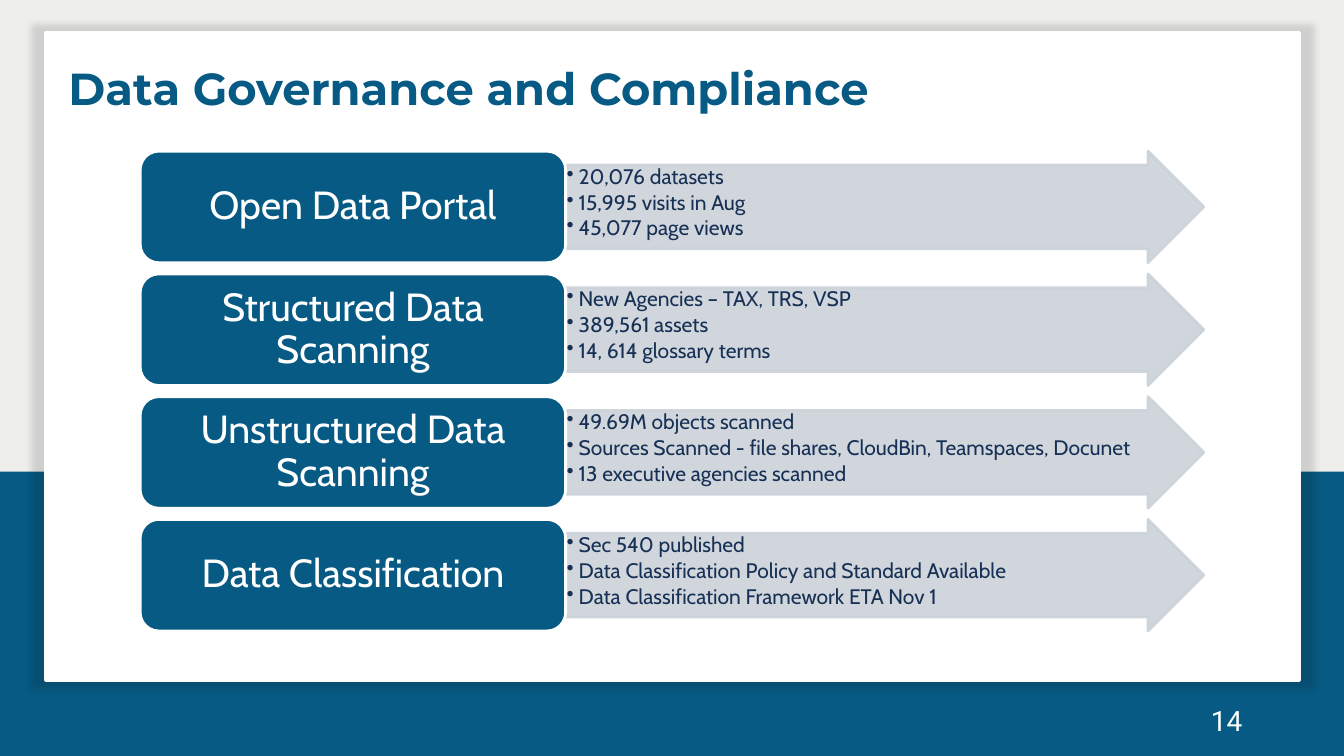
from lxml import etree
from pptx import Presentation
from pptx.dml.color import RGBColor
from pptx.enum.shapes import MSO_SHAPE
from pptx.enum.text import MSO_ANCHOR, PP_ALIGN
from pptx.oxml import parse_xml
from pptx.oxml.ns import qn
from pptx.util import Inches, Pt

RECTANGLE = MSO_SHAPE.RECTANGLE
ROUNDED = MSO_SHAPE.ROUNDED_RECTANGLE
ARROW = MSO_SHAPE.RIGHT_ARROW
TOP, MIDDLE = MSO_ANCHOR.TOP, MSO_ANCHOR.MIDDLE
LEFT, CENTER, RIGHT = PP_ALIGN.LEFT, PP_ALIGN.CENTER, PP_ALIGN.RIGHT

BLUE = RGBColor(0x07, 0x5A, 0x83)
NAVY = RGBColor(0x17, 0x30, 0x55)
GREY = RGBColor(0xCC, 0xD2, 0xD9)
PALE = RGBColor(0xEE, 0xEE, 0xED)
WHITE = RGBColor(0xFF, 0xFF, 0xFF)

PANEL_SHADOW = (
    '<a:effectLst xmlns:a="http://schemas.openxmlformats.org/drawingml/2006/main">'
    '<a:outerShdw blurRad="63500" sx="102000" sy="102000" algn="ctr" rotWithShape="0">'
    '<a:srgbClr val="000000"><a:alpha val="13000"/></a:srgbClr>'
    '</a:outerShdw></a:effectLst>'
)

TOPICS = [
    ("Open Data Portal",
     ["20,076 datasets", "15,995 visits in Aug", "45,077 page views"]),
    ("Structured Data Scanning",
     ["New Agencies – TAX, TRS, VSP", "389,561 assets", "14, 614 glossary terms"]),
    ("Unstructured Data Scanning",
     ["49.69M objects scanned",
      "Sources Scanned - file shares, CloudBin, Teamspaces, Docunet",
      "13 executive agencies scanned"]),
    ("Data Classification",
     ["Sec 540 published",
      "Data Classification Policy and Standard Available",
      "Data Classification Framework ETA Nov 1"]),
]


def add_block(slide, preset, box, fill, line=None):
    """Add a flat preset shape, with a 2 pt outline if a line colour is given."""
    block = slide.shapes.add_shape(preset, *map(Inches, box))
    block.shadow.inherit = False
    block.fill.solid()
    block.fill.fore_color.rgb = fill
    if line is None:
        block.line.fill.background()
    else:
        block.line.color.rgb = line
        block.line.width = Pt(2)
    return block


def write(frame, lines, font, size, color, align, anchor, bold=False):
    """Fill a text frame with one paragraph per line in a single style."""
    frame.word_wrap = True
    frame.vertical_anchor = anchor
    frame.text = "\n".join(lines)
    for paragraph in frame.paragraphs:
        paragraph.alignment = align
        for run in paragraph.runs:
            run.font.name = font
            run.font.size = Pt(size)
            run.font.bold = bold
            run.font.color.rgb = color


def set_insets(frame, horizontal, vertical):
    """Set matching side insets and matching top and bottom insets."""
    frame.margin_left = frame.margin_right = Inches(horizontal)
    frame.margin_top = frame.margin_bottom = Inches(vertical)


def add_label(slide, box, text, font, size, align, color, bold=False):
    """Add a vertically centred line of text."""
    label = slide.shapes.add_textbox(*map(Inches, box))
    write(label.text_frame, [text], font, size, color, align, MIDDLE, bold)


def add_backdrop(slide, width, height):
    """Draw the pale background, the blue band and the white panel."""
    slide.background.fill.solid()
    slide.background.fill.fore_color.rgb = PALE
    band_top = 4.68
    add_block(slide, RECTANGLE, (0, band_top, width, height - band_top), BLUE)
    panel = add_block(slide, RECTANGLE, (0.45, 0.32, 12.44, 6.43), WHITE, WHITE)
    properties = panel.fill._xPr
    properties.replace(properties.find(qn("a:effectLst")), parse_xml(PANEL_SHADOW))


def add_facts_arrow(slide, box, facts):
    """Draw a translucent arrow holding a bulleted list of facts."""
    arrow = add_block(slide, ARROW, box, GREY, GREY)
    arrow.adjustments[0] = 0.75
    arrow.adjustments[1] = 0.5
    for color in arrow.fill._xPr.iter(qn("a:srgbClr")):
        etree.SubElement(color, qn("a:alpha"), val="90000")
    frame = arrow.text_frame
    set_insets(frame, 0.01, 0.01)
    write(frame, facts, "Cabin", 15, NAVY, LEFT, TOP)
    for paragraph in frame.paragraphs:
        paragraph.line_spacing = 0.9
        paragraph.space_after = Pt(2.25)
        properties = paragraph._p.get_or_add_pPr()
        properties.set("marL", str(Inches(0.12)))
        properties.set("indent", str(Inches(-0.12)))
        etree.SubElement(properties, qn("a:buChar"), char="•")


def add_topic(slide, box, heading, facts):
    """Draw one row: a rounded heading box followed by its facts arrow."""
    left, top, width, height = box
    heading_width = width * 0.4
    arrow_left = left + heading_width
    add_facts_arrow(slide, (arrow_left, top, width - heading_width, height), facts)
    card = add_block(slide, ROUNDED, (left, top, heading_width, height), BLUE, WHITE)
    set_insets(card.text_frame, 0.12, 0.06)
    write(card.text_frame, [heading], "Cabin", 28, WHITE, CENTER, MIDDLE)
    card.text_frame.paragraphs[0].line_spacing = 0.9


def add_topics(slide, box):
    """Stack the topic rows evenly in the box, with gaps of 5% of a row."""
    left, top, width, height = box
    gap_ratio = 0.1
    row_height = height / (len(TOPICS) + gap_ratio * (len(TOPICS) - 1))
    pitch = row_height * (1 + gap_ratio)
    for index, (heading, facts) in enumerate(TOPICS):
        row = (left, top + index * pitch, width, row_height)
        add_topic(slide, row, heading, facts)


def main():
    """Build and save the slide."""
    width, height = 13.33, 7.5
    deck = Presentation()
    deck.slide_width, deck.slide_height = Inches(width), Inches(height)
    slide = deck.slides.add_slide(deck.slide_layouts[6])
    add_backdrop(slide, width, height)
    add_label(slide, (0.58, 0.44, 12.16, 0.85), "Data Governance and Compliance",
              "Montserrat", 32, LEFT, BLUE, bold=True)
    add_topics(slide, (1.39, 1.5, 10.55, 4.76))
    add_label(slide, (9.42, 6.95, 3, 0.4), "14", "Roboto", 20, RIGHT, WHITE)
    deck.save("out.pptx")


if __name__ == "__main__":
    main()
